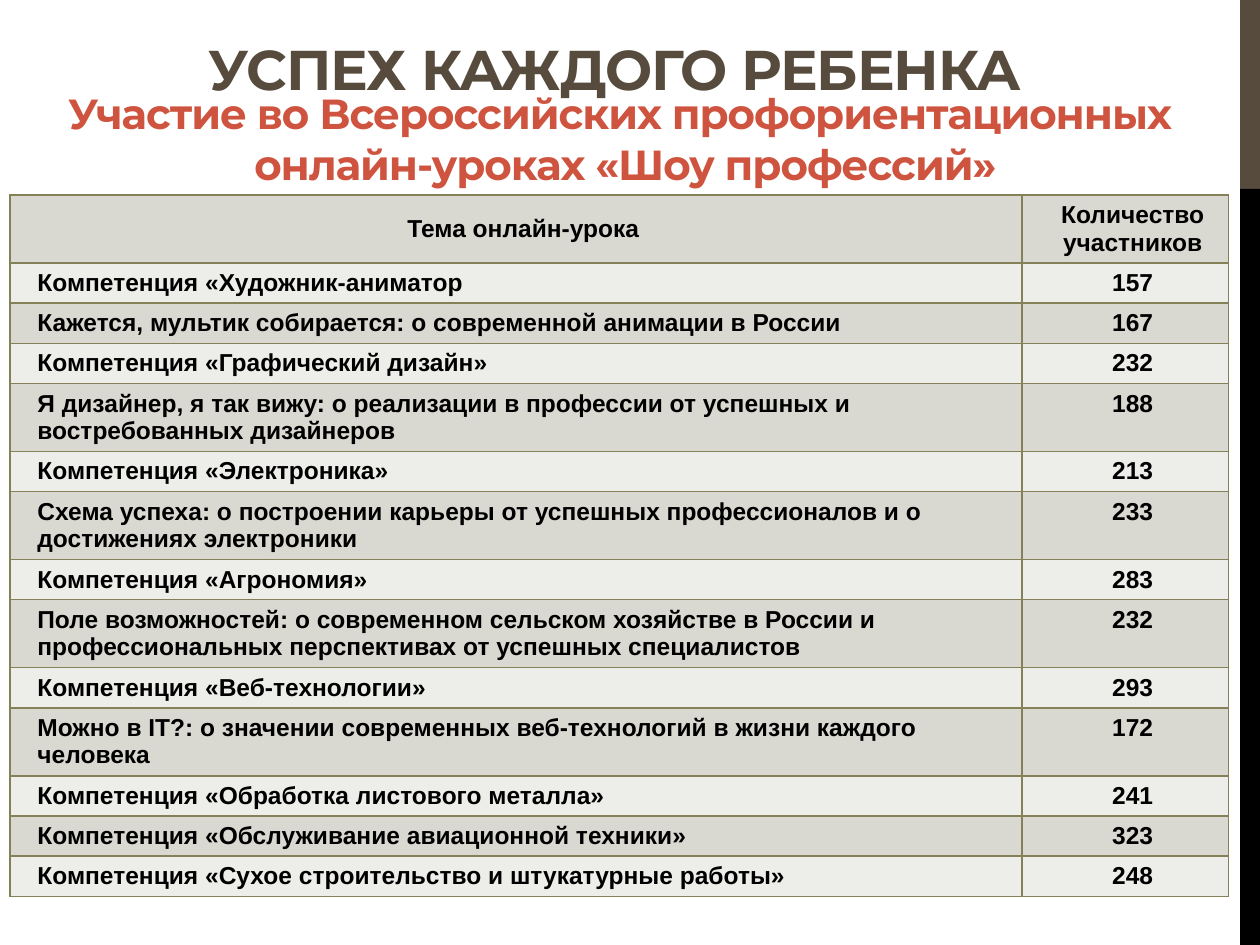
"""Build a slide with a table of career-guidance lessons and their attendance."""
import dataclasses

import pptx
import pptx.dml.color
import pptx.enum.shapes
import pptx.enum.text
import pptx.oxml
import pptx.oxml.ns
import pptx.util

Cm = pptx.util.Cm
ALIGN = pptx.enum.text.PP_ALIGN
ANCHOR = pptx.enum.text.MSO_ANCHOR


@dataclasses.dataclass(frozen=True)
class Theme:
    brown: str = "564B3C"
    black: str = "000000"
    red: str = "CF543F"
    border: str = "848058"
    bands: tuple = ("D9D8D1", "EDEDEA")
    heading_font: str = "Montserrat"
    table_font: str = "Arial"
    heading_size: int = 32
    title_size: int = 24
    table_size: int = 14


theme = Theme()


def rgb(color):
    return pptx.dml.color.RGBColor.from_string(color)


def add_run(p, text, font, size, color):
    r = p.add_run()
    r.text = text
    r.font.name = font
    r.font.size = pptx.util.Pt(size)
    r.font.bold = True
    r.font.color.rgb = rgb(color)
    return r


prs = pptx.Presentation()
prs.slide_width, prs.slide_height = Cm(25.4), Cm(19.05)
s = prs.slides.add_slide(prs.slide_layouts[6])

for top, height, color in ((0, 3.81, theme.brown), (3.81, 15.24, theme.black)):
    sp = s.shapes.add_shape(pptx.enum.shapes.MSO_SHAPE.RECTANGLE,
                            Cm(25), Cm(top), Cm(0.4), Cm(height))
    sp.shadow.inherit = False
    sp.fill.solid()
    sp.fill.fore_color.rgb = rgb(color)
    sp.line.fill.background()

lessons = (
    ("Тема онлайн-урока", "Количество участников", 2),
    ("Компетенция «Художник-аниматор", "157", 1),
    ("Кажется, мультик собирается: о современной анимации в России", "167", 1),
    ("Компетенция «Графический дизайн»", "232", 1),
    ("Я дизайнер, я так вижу: о реализации в профессии от успешных и "
     "востребованных дизайнеров", "188", 2),
    ("Компетенция «Электроника»", "213", 1),
    ("Схема успеха: о построении карьеры от успешных профессионалов и о "
     "достижениях электроники", "233", 2),
    ("Компетенция «Агрономия»", "283", 1),
    ("Поле возможностей: о современном сельском хозяйстве в России и "
     "профессиональных перспективах от успешных специалистов", "232", 2),
    ("Компетенция «Веб-технологии»", "293", 1),
    ("Можно в IT?: о значении современных веб-технологий в жизни каждого "
     "человека", "172", 2),
    ("Компетенция «Обработка листового металла»", "241", 1),
    ("Компетенция «Обслуживание авиационной техники»", "323", 1),
    ("Компетенция «Сухое строительство и штукатурные работы»", "248", 1),
)
row_heights = {1: Cm(0.81), 2: Cm(1.37)}
table_height = sum(row_heights[lines] for *_, lines in lessons)
table = s.shapes.add_table(len(lessons), 2, Cm(0.2), Cm(3.93),
                           Cm(24.57), table_height).table
table.first_row = table.horz_banding = False
table.columns[0].width, table.columns[1].width = Cm(20.4), Cm(4.17)

for i, (topic, count, lines) in enumerate(lessons):
    table.rows[i].height = row_heights[lines]
    for j, text in enumerate((topic, count)):
        cell = table.cell(i, j)
        tcPr = cell._tc.get_or_add_tcPr()
        for side in "LRTB":
            tcPr.append(pptx.oxml.parse_xml(
                f'<a:ln{side} {pptx.oxml.ns.nsdecls("a")} w="12700"><a:solidFill>'
                f'<a:srgbClr val="{theme.border}"/></a:solidFill></a:ln{side}>'))
        cell.fill.solid()
        cell.fill.fore_color.rgb = rgb(theme.bands[i % 2])
        cell.vertical_anchor = ANCHOR.TOP if i else ANCHOR.MIDDLE
        p = cell.text_frame.paragraphs[0]
        p.alignment = ALIGN.LEFT if i and j == 0 else ALIGN.CENTER
        p._p.get_or_add_pPr().set("marL", str(Cm(0.3)))
        add_run(p, text, theme.table_font, theme.table_size, theme.black)

headings = (
    (0.3, 2.18, 24.61, 1.75, theme.title_size, theme.red,
     ("Участие во Всероссийских профориентационных ",
      "онлайн-уроках «Шоу профессий»")),
    (0, 0.18, 24.79, 2, theme.heading_size, theme.brown,
     ("УСПЕХ КАЖДОГО РЕБЕНКА",)),
)
for left, top, width, height, size, color, lines in headings:
    tf = s.shapes.add_textbox(Cm(left), Cm(top), Cm(width), Cm(height)).text_frame
    tf.word_wrap = True
    tf.vertical_anchor = ANCHOR.BOTTOM
    p = tf.paragraphs[0]
    p.alignment = ALIGN.CENTER
    for n, line in enumerate(lines):
        if n:
            p.add_line_break()
        r = add_run(p, line, theme.heading_font, size, color)
        r._r.get_or_add_rPr().set("spc", "-60")

prs.save("out.pptx")
